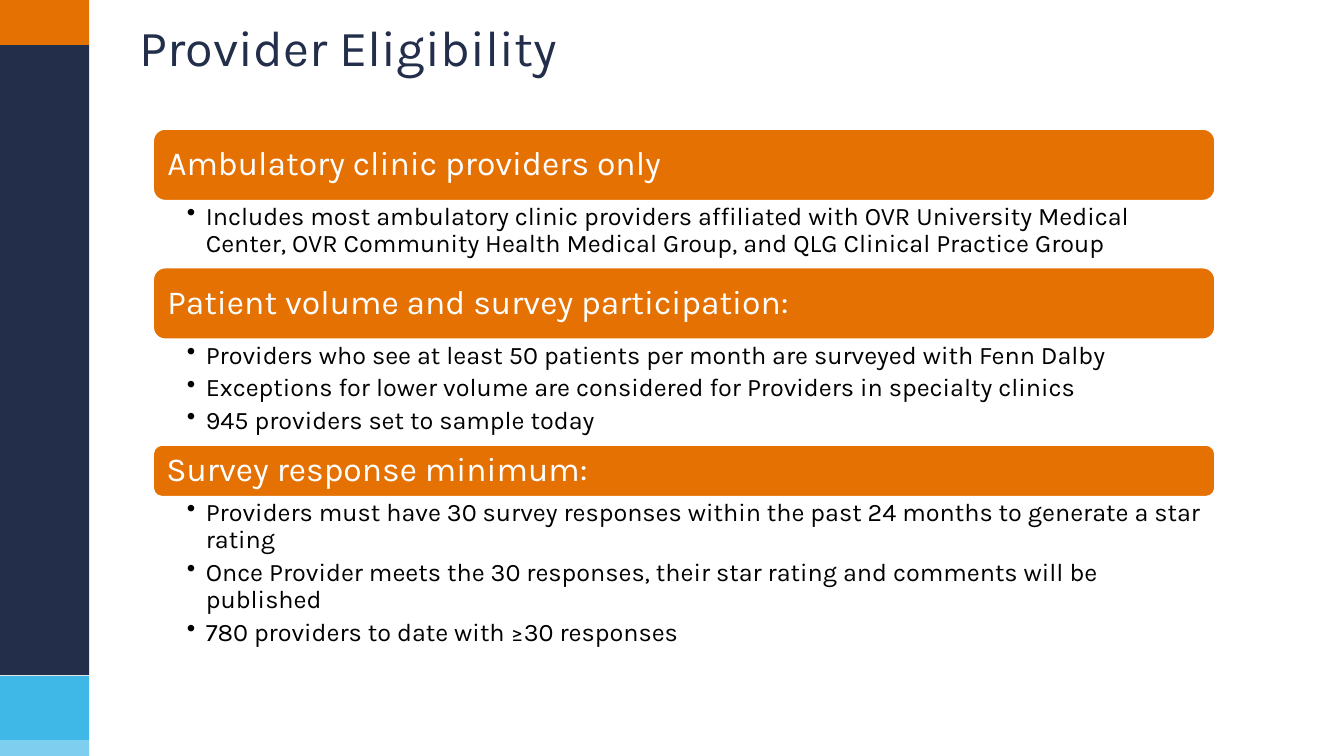
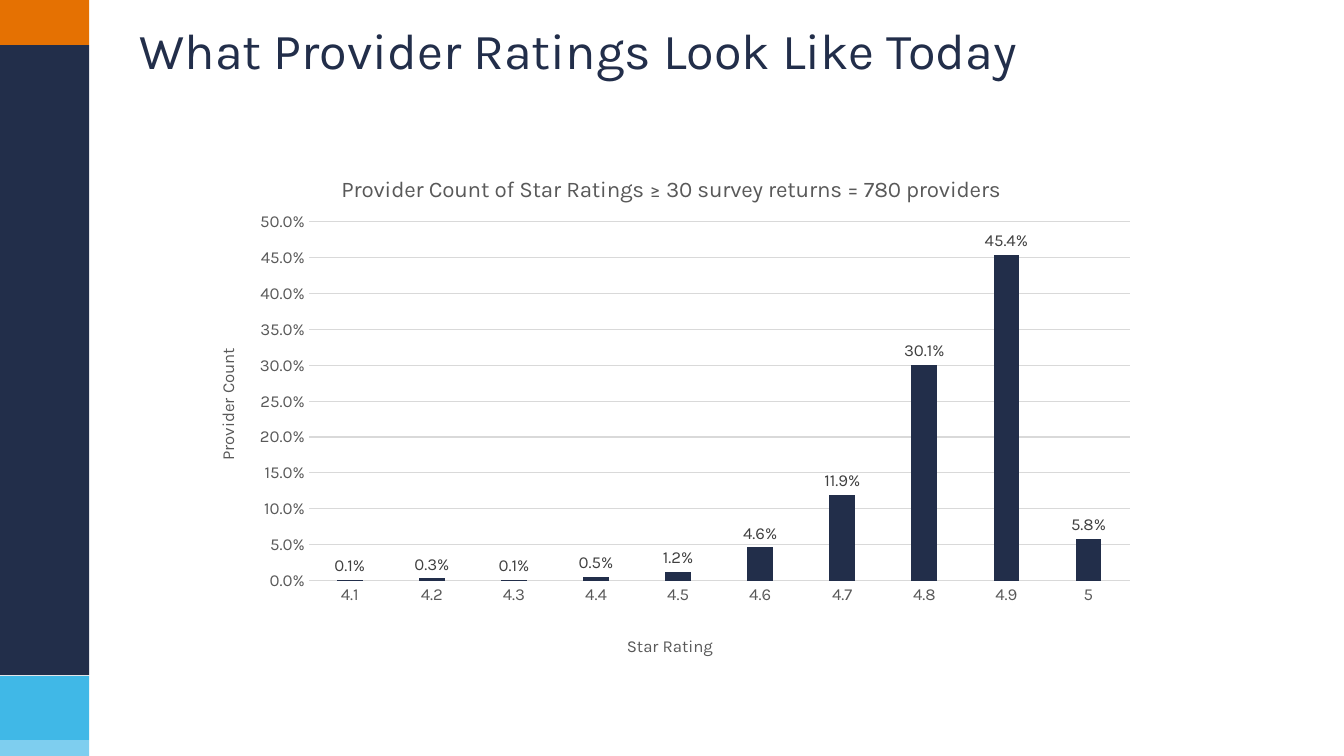
from typing import NamedTuple

from lxml.etree import SubElement
from pptx import Presentation
from pptx.chart.chart import Chart
from pptx.chart.data import CategoryChartData
from pptx.dml.color import RGBColor
from pptx.enum.chart import XL_CHART_TYPE, XL_LABEL_POSITION, XL_TICK_MARK
from pptx.enum.shapes import MSO_SHAPE
from pptx.enum.text import MSO_ANCHOR, PP_ALIGN
from pptx.oxml import parse_xml
from pptx.oxml.ns import nsdecls, qn
from pptx.oxml.xmlchemy import BaseOxmlElement
from pptx.presentation import Presentation as Deck
from pptx.shapes.autoshape import Shape
from pptx.slide import Slide
from pptx.text.text import Font, TextFrame
from pptx.util import Emu, Pt

FONT = "Karla"
ORANGE = RGBColor(0xE5, 0x71, 0x02)
NAVY = RGBColor(0x22, 0x2E, 0x4A)
BLUE = RGBColor(0x40, 0xB8, 0xE7)
PALE = RGBColor(0x7E, 0xCE, 0xEF)
WHITE = RGBColor(0xFF, 0xFF, 0xFF)
BLACK = RGBColor(0, 0, 0)
GRAY = RGBColor(0x59, 0x59, 0x59)
DARK = RGBColor(0x40, 0x40, 0x40)
GRID = RGBColor(0xD9, 0xD9, 0xD9)

SCALE = 9525  # EMU in one px, 96 px to the inch
WIDE, HIGH = 1280, 720
SIDE = 85
LEFT, SPAN = 146, 1011
INDENT = 18


class Box(NamedTuple):
    x: int
    y: int
    w: int
    h: int

    def emu(self) -> tuple[Emu, ...]:
        return tuple(px(n) for n in self)


class Pad(NamedTuple):
    left: int
    top: int
    right: int
    bottom: int


class Band(NamedTuple):
    top: int
    high: int
    fill: RGBColor


class Topic(NamedTuple):
    top: int
    high: int
    body: int
    head: str
    points: list[str]


class Spot(NamedTuple):
    """Place inside a chart, as shares of its width and height."""
    x: float
    y: float
    w: float = 0
    h: float = 0


BANDS = [
    Band(0, 43, ORANGE),
    Band(43, 600, NAVY),
    Band(644, 61, BLUE),
    Band(705, 15, PALE),
]

TOPICS = [
    Topic(123, 68, 64, "Ambulatory clinic providers only", [
        "Includes most ambulatory clinic providers affiliated with OVR University "
        "Medical Center, OVR Community Health Medical Group, and QLG Clinical "
        "Practice Group",
    ]),
    Topic(255, 68, 100, "Patient volume and survey participation:", [
        "Providers who see at least 50 patients per month are surveyed with Fenn Dalby",
        "Exceptions for lower volume are considered for Providers in specialty clinics",
        "945 providers set to sample today",
    ]),
    Topic(424, 49, 150, "Survey response minimum:", [
        "Providers must have 30 survey responses within the past 24 months to "
        "generate a star rating",
        "Once Provider meets the 30 responses, their star rating and comments "
        "will be published",
        "780 providers to date with ≥30 responses",
    ]),
]

RATES = {
    "4.1": 0.001, "4.2": 0.003, "4.3": 0.001, "4.4": 0.005, "4.5": 0.012,
    "4.6": 0.046, "4.7": 0.119, "4.8": 0.301, "4.9": 0.454, "5": 0.058,
}


def px(n: int) -> Emu:
    return Emu(n * SCALE)


def style(font: Font, size: int, color: RGBColor) -> None:
    font.name = FONT
    font.size = Pt(size)
    font.bold = False
    font.color.rgb = color


def write(frame: TextFrame, lines: list[str], size: int, color: RGBColor,
          pad: Pad, bullet: bool = False) -> None:
    frame.word_wrap = True
    frame.margin_left, frame.margin_top = px(pad.left), px(pad.top)
    frame.margin_right, frame.margin_bottom = px(pad.right), px(pad.bottom)
    frame.text = "\n".join(lines)
    for para in frame.paragraphs:
        if bullet:
            props = para._p.get_or_add_pPr()
            props.set("marL", str(px(INDENT)))
            props.set("indent", str(-px(INDENT)))
            SubElement(props, qn("a:buChar")).set("char", "•")
            para.space_after = Pt(4)
        para.alignment = PP_ALIGN.LEFT
        para.line_spacing = 0.9
        for run in para.runs:
            style(run.font, size, color)


def block(slide: Slide, kind: MSO_SHAPE, box: Box, fill: RGBColor) -> Shape:
    shape = slide.shapes.add_shape(kind, *box.emu())
    shape.shadow.inherit = False
    shape.fill.solid()
    shape.fill.fore_color.rgb = fill
    shape.line.fill.background()
    return shape


def start(deck: Deck, title: str, top: int) -> Slide:
    """Add a slide with the side bands and its title."""
    slide = deck.slides.add_slide(deck.slide_layouts[6])
    for band in BANDS:
        box = Box(0, band.top, SIDE, band.high)
        block(slide, MSO_SHAPE.RECTANGLE, box, band.fill)
    text = slide.shapes.add_textbox(*Box(123, top, 1034, 122).emu())
    write(text.text_frame, [title], 36, NAVY, Pad(10, 5, 10, 5))
    return slide


def show(slide: Slide, topic: Topic) -> None:
    bar = block(slide, MSO_SHAPE.ROUNDED_RECTANGLE,
                Box(LEFT, topic.top, SPAN, topic.high), ORANGE)
    bar.line.color.rgb = WHITE
    bar.line.width = Pt(1)
    bar.text_frame.vertical_anchor = MSO_ANCHOR.MIDDLE
    write(bar.text_frame, [topic.head], 24, WHITE, Pad(10, 0, 10, 0))
    box = Box(LEFT, topic.top + topic.high, SPAN, topic.body)
    body = slide.shapes.add_textbox(*box.emu())
    write(body.text_frame, topic.points, 18, BLACK, Pad(32, 3, 13, 3), True)


def place(host: BaseOxmlElement, spot: Spot, index: int) -> None:
    """Give a chart part a fixed place; a part without width sizes itself."""
    old = host.find(qn("c:layout"))
    if old is not None:
        host.remove(old)
    layout = parse_xml(f"<c:layout {nsdecls('c')}/>")
    host.insert(index, layout)
    manual = SubElement(layout, qn("c:manualLayout"))
    vals = {"xMode": "edge", "yMode": "edge", "x": spot.x, "y": spot.y}
    if spot.w:
        vals = {"layoutTarget": "inner", **vals, "w": spot.w, "h": spot.h}
    for name, val in vals.items():
        SubElement(manual, qn(f"c:{name}")).set("val", str(val))


def label(frame: TextFrame, host: BaseOxmlElement, text: str, size: int,
          spot: Spot) -> None:
    frame.text = text
    style(frame.paragraphs[0].runs[0].font, size, GRAY)
    place(host, spot, 1)


def dress(chart: Chart) -> None:
    """Set the look of the axes, bars and labels."""
    chart.has_legend = False
    style(chart.font, 10, BLACK)
    cat, val = chart.category_axis, chart.value_axis
    for axis in (cat, val):
        axis.major_tick_mark = axis.minor_tick_mark = XL_TICK_MARK.NONE
        style(axis.tick_labels.font, 12, GRAY)
    cat.has_major_gridlines = False
    val.has_major_gridlines = True
    for line in (cat.format.line, val.major_gridlines.format.line):
        line.color.rgb = GRID
        line.width = Pt(0.75)
    val.format.line.fill.background()
    val.minimum_scale, val.maximum_scale, val.major_unit = 0, 0.5, 0.05
    val.tick_labels.number_format = "0.0%"
    val.tick_labels.number_format_is_linked = False

    plot = chart.plots[0]
    plot.vary_by_categories = False
    plot.gap_width, plot.overlap = 219, -27
    fill = plot.series[0].format.fill
    fill.solid()
    fill.fore_color.rgb = NAVY
    plot.has_data_labels = True
    tags = plot.data_labels
    tags.show_value = True
    tags.number_format = "0.0%"
    tags.number_format_is_linked = False
    tags.position = XL_LABEL_POSITION.OUTSIDE_END
    style(tags.font, 12, DARK)


def graph(slide: Slide) -> None:
    data = CategoryChartData(number_format="0.0%")
    data.categories = list(RATES)
    data.add_series("Series 1", list(RATES.values()))
    chart = slide.shapes.add_chart(XL_CHART_TYPE.COLUMN_CLUSTERED,
                                   *Box(185, 143, 909, 488).emu(), data).chart
    dress(chart)
    chart.has_title = True
    head = chart.chart_title
    label(head.text_frame, head.element,
          "Provider Count of Star Ratings ≥ 30 survey returns = 780 providers",
          16, Spot(0.15, 0.04))
    foot = chart.category_axis.axis_title
    label(foot.text_frame, foot.element, "Star Rating", 12, Spot(0.45, 0.94))
    side = chart.value_axis.axis_title
    label(side.text_frame, side.element, "Provider Count", 12, Spot(0.02, 0.38))
    turn = side.element.find(".//" + qn("a:bodyPr"))
    turn.set("rot", "-5400000")
    turn.set("vert", "horz")
    area = chart.element.find(".//" + qn("c:plotArea"))
    place(area, Spot(0.12, 0.14, 0.86, 0.7), 0)


def main() -> None:
    deck = Presentation()
    deck.slide_width, deck.slide_height = px(WIDE), px(HIGH)
    rules = start(deck, "Provider Eligibility", 17)
    for topic in TOPICS:
        show(rules, topic)
    graph(start(deck, "What Provider Ratings Look Like Today", 20))
    deck.save("out.pptx")


if __name__ == "__main__":
    main()
